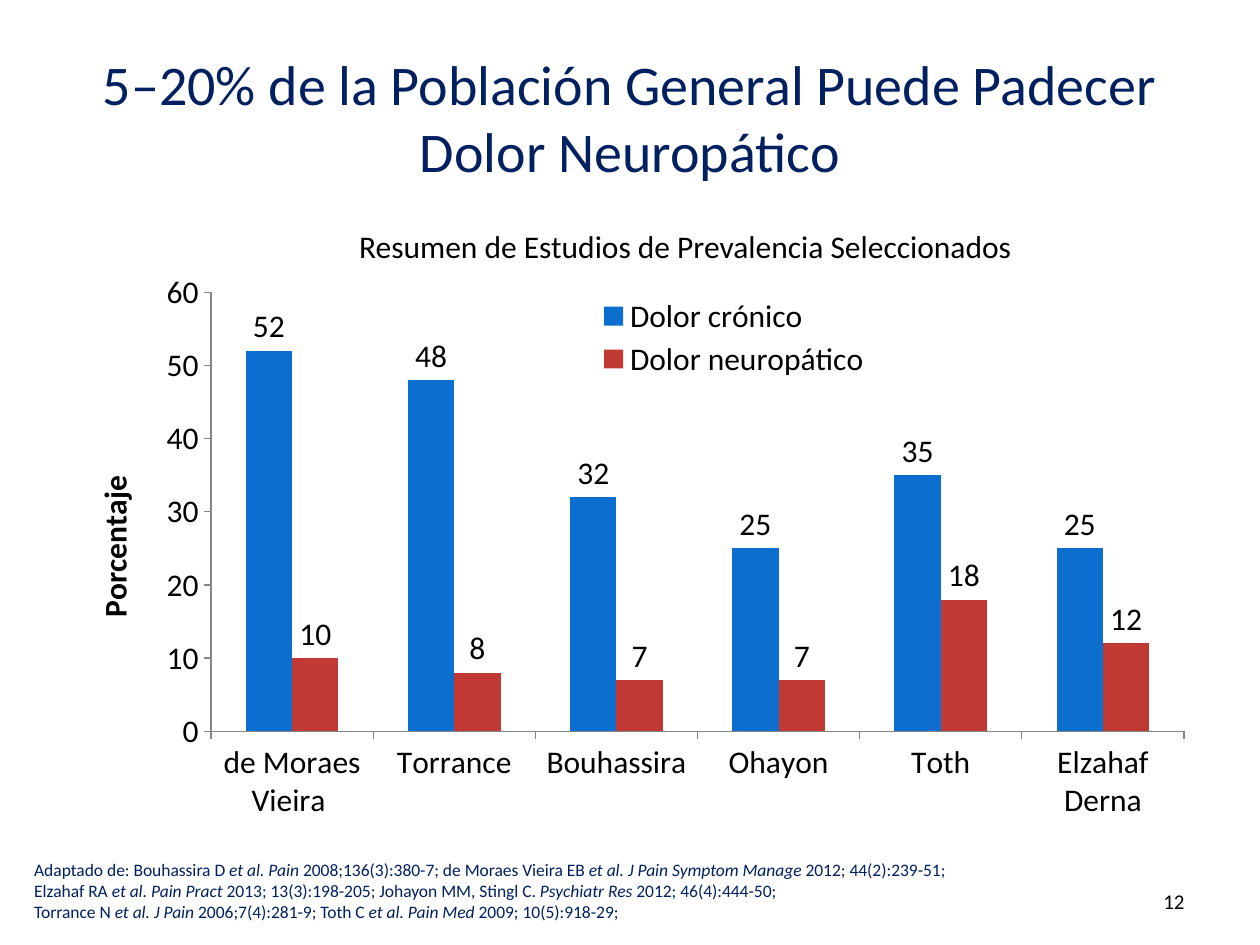
from lxml.etree import SubElement
from pptx import Presentation
from pptx.chart.data import CategoryChartData
from pptx.dml.color import RGBColor
from pptx.enum.chart import XL_CHART_TYPE as ChartType, XL_LABEL_POSITION as LabelPos
from pptx.enum.chart import XL_LEGEND_POSITION as LegendPos, XL_TICK_MARK as Tick
from pptx.enum.text import MSO_ANCHOR as Anchor, MSO_AUTO_SIZE as AutoSize, PP_ALIGN as Align
from pptx.oxml.ns import qn
from pptx.util import Cm, Pt

TITLE = "5–20% de la Población General Puede Padecer Dolor Neuropático"
SUBTITLE = "Resumen de Estudios de Prevalencia Seleccionados"
AXIS_TITLE = "Porcentaje"
STUDIES = ["de Moraes Vieira ", "Torrance", "Bouhassira", "Ohayon", "Toth", "Elzahaf Derna"]
SERIES = [
    ("Dolor crónico", [52, 48, 32, 25, 35, 25], "0C6FCF"),
    ("Dolor neuropático", [10, 8, 7, 7, 18, 12], "C03932"),
]
# Each line alternates upright and italic text
REFERENCES = [
    ["Adaptado de: Bouhassira D ", "et al. Pain ", "2008;136(3):380-7; de Moraes Vieira EB ",
     "et al. J Pain Symptom Manage", " 2012; 44(2):239-51; "],
    ["Elzahaf RA ", "et al. Pain Pract", " 2013; 13(3):198-205; Johayon MM, Stingl C. ",
     "Psychiatr Res", " 2012; 46(4):444-50;"],
    ["Torrance N ", "et al. J Pain", " 2006;7(4):281-9; Toth C ", "et al. Pain Med",
     " 2009; 10(5):918-29;"],
]
PAGE = "12"
NAVY, BLACK, GRAY = "002060", "000000", "868686"
PLOT = dict(x=0.124, y=0.04, w=0.858, h=0.63)
LEGEND = dict(x=0.45, y=0.04, w=0.27, h=0.13)


def color(hex_code):
    return RGBColor.from_string(hex_code)


def set_font(font, size, hex_code, **formats):
    for name, value in dict(name="Calibri", size=Pt(size), **formats).items():
        setattr(font, name, value)
    font.color.rgb = color(hex_code)


def set_frame(tf, **formats):
    for name, value in formats.items():
        setattr(tf, name, value)


def add_text(s, box, text, size, align=Align.LEFT, **formats):
    tf = s.shapes.add_textbox(*map(Cm, box)).text_frame
    set_frame(tf, **formats)
    p = tf.paragraphs[0]
    p.alignment = align
    r = p.add_run()
    r.text = text
    set_font(r.font, size, BLACK)


def set_layout(parent, fractions, inner=False):
    """Place a plot area or legend by fractions of the chart's size."""
    for old in parent.findall(qn("c:layout")):
        parent.remove(old)
    layout = SubElement(parent, qn("c:layout"))
    manual = SubElement(layout, qn("c:manualLayout"))
    values = {"layoutTarget": "inner"} if inner else {}
    values.update(xMode="edge", yMode="edge", **fractions)
    for tag, value in values.items():
        SubElement(manual, qn(f"c:{tag}")).set("val", str(value))
    parent.insert(0 if inner else 1, layout)


def add_prevalence_chart(s):
    data = CategoryChartData()
    data.categories = STUDIES
    for name, values, _ in SERIES:
        data.add_series(name, values)
    box = map(Cm, (1.42, 5.33, 22.86, 14.05))
    chart = s.shapes.add_chart(ChartType.COLUMN_CLUSTERED, *box, data).chart
    set_font(chart.font, 18, BLACK)
    chart.has_title = False

    plot = chart.plots[0]
    set_frame(plot, gap_width=150, overlap=0, vary_by_categories=False)
    for series, (_, _, fill) in zip(plot.series, SERIES):
        series.format.fill.solid()
        series.format.fill.fore_color.rgb = color(fill)
        series.invert_if_negative = False
        set_frame(series.data_labels, show_value=True, position=LabelPos.OUTSIDE_END)

    for axis in (chart.category_axis, chart.value_axis):
        set_frame(axis, has_major_gridlines=False, major_tick_mark=Tick.OUTSIDE,
                  minor_tick_mark=Tick.NONE)
        axis.format.line.color.rgb = color(GRAY)
    set_frame(chart.value_axis, minimum_scale=0, maximum_scale=60, major_unit=10)
    tf = chart.value_axis.axis_title.text_frame
    tf.text = AXIS_TITLE
    set_font(tf.paragraphs[0].runs[0].font, 18, BLACK, bold=True)

    chart.has_legend = True
    set_frame(chart.legend, position=LegendPos.RIGHT, include_in_layout=True)
    set_layout(chart.legend._element, LEGEND)
    set_layout(plot._element.getparent(), PLOT, inner=True)


def add_references(s):
    tf = s.shapes.add_textbox(*map(Cm, (0.69, 17.32, 23.7, 1.27))).text_frame
    set_frame(tf, word_wrap=True, vertical_anchor=Anchor.BOTTOM, margin_left=0,
              margin_right=0, margin_top=0, margin_bottom=0)
    p = tf.paragraphs[0]
    for number, line in enumerate(REFERENCES):
        if number:
            p.add_line_break()
        for i, text in enumerate(line):
            r = p.add_run()
            r.text = text
            set_font(r.font, 10, NAVY, italic=i % 2 == 1)


def main():
    prs = Presentation()
    prs.slide_width, prs.slide_height = Cm(25.4), Cm(19.05)
    s = prs.slides.add_slide(prs.slide_layouts[5])

    title = s.shapes.title
    set_frame(title, left=Cm(1.27), top=Cm(0.76), width=Cm(22.86), height=Cm(3.18))
    tf = title.text_frame
    tf.text = TITLE
    set_frame(tf, vertical_anchor=Anchor.MIDDLE, auto_size=AutoSize.NONE)
    tf.paragraphs[0].alignment = Align.CENTER
    set_font(tf.paragraphs[0].runs[0].font, 32, NAVY)

    add_prevalence_chart(s)
    add_text(s, (6.99, 4.45, 13.82, 1.02), SUBTITLE, 18, word_wrap=False,
             auto_size=AutoSize.SHAPE_TO_FIT_TEXT)
    add_references(s)
    add_text(s, (18.21, 17.65, 5.92, 1.02), PAGE, 12, Align.RIGHT, word_wrap=True,
             vertical_anchor=Anchor.MIDDLE)
    prs.save("out.pptx")


if __name__ == "__main__":
    main()
